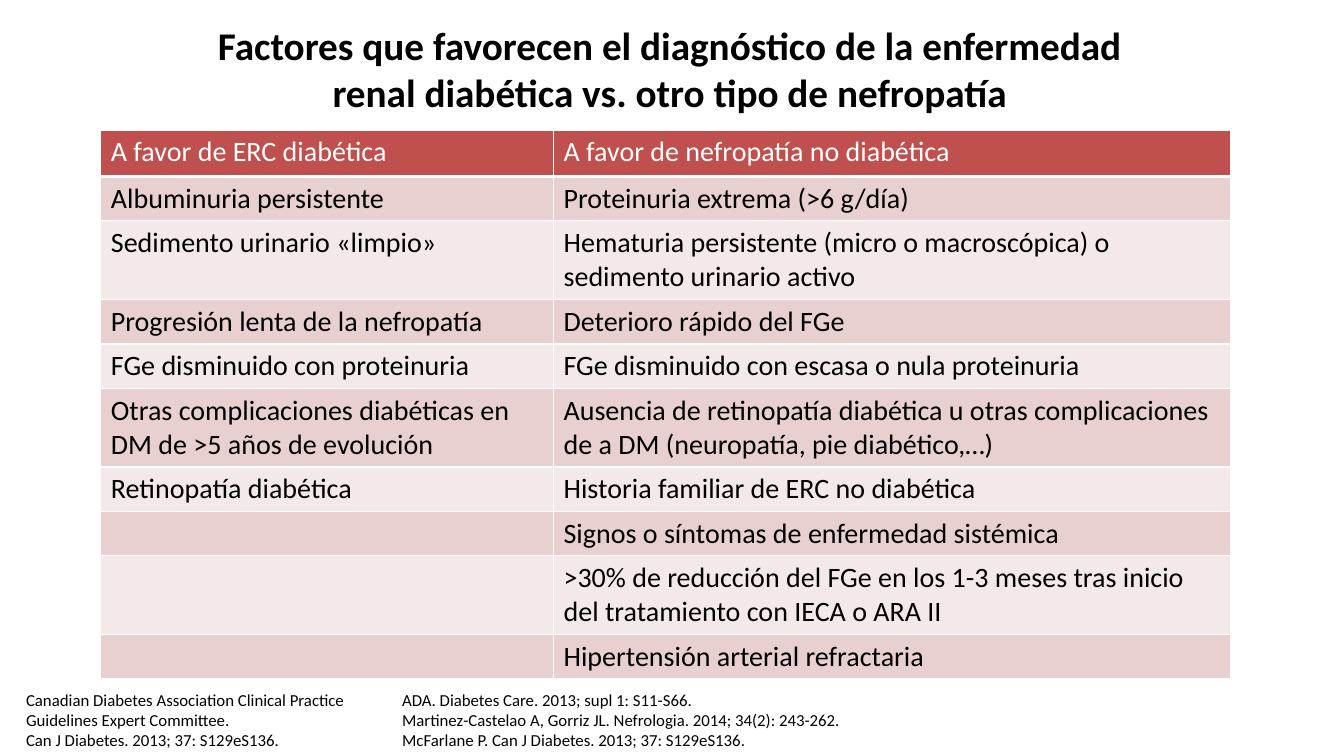
import pptx
import pptx.dml.color
import pptx.enum.text
import pptx.oxml
import pptx.oxml.ns
import pptx.util

Inches = pptx.util.Inches
Pt = pptx.util.Pt

HEADER_FILL = "C0504D"
BAND_FILLS = ("E8D0D0", "F4E9E9")
COLUMN_SHARES = (4.49, 6.72)
HEADER_HEIGHT, SINGLE_HEIGHT, DOUBLE_HEIGHT = 0.46, 0.43, 0.75
DOUBLE_ROWS = (2, 5, 8)

HEADING = ("Factores que favorecen el diagnóstico de la enfermedad "
           "renal diabética vs. otro tipo de nefropatía")
FACTORS = [
    ("A favor de ERC diabética", "A favor de nefropatía no diabética"),
    ("Albuminuria persistente", "Proteinuria extrema (>6 g/día)"),
    ("Sedimento urinario «limpio»",
     "Hematuria persistente (micro o macroscópica) o sedimento urinario activo"),
    ("Progresión lenta de la nefropatía", "Deterioro rápido del FGe"),
    ("FGe disminuido con proteinuria", "FGe disminuido con escasa o nula proteinuria"),
    ("Otras complicaciones diabéticas en DM de >5 años de evolución",
     "Ausencia de retinopatía diabética u otras complicaciones de a DM "
     "(neuropatía, pie diabético,…)"),
    ("Retinopatía diabética", "Historia familiar de ERC no diabética"),
    ("", "Signos o síntomas de enfermedad sistémica"),
    ("", ">30% de reducción del FGe en los 1-3 meses tras inicio del "
         "tratamiento con IECA o ARA II"),
    ("", "Hipertensión arterial refractaria"),
]
GUIDELINE_REFERENCES = [
    "Canadian Diabetes Association Clinical Practice Guidelines Expert Committee.",
    "Can J Diabetes. 2013; 37: S129eS136.",
]
ARTICLE_REFERENCES = [
    "ADA. Diabetes Care. 2013; supl 1: S11-S66.",
    "Martinez-Castelao A, Gorriz JL. Nefrologia. 2014; 34(2): 243-262.",
    "McFarlane P. Can J Diabetes. 2013; 37: S129eS136.",
]


def rgb(hex_code):
    return pptx.dml.color.RGBColor.from_string(hex_code)


def style_text(frame, size, hex_code="000000", bold=False):
    for paragraph in frame.paragraphs:
        for font in [paragraph.font] + [run.font for run in paragraph.runs]:
            font.name = "Calibri"
            font.size = Pt(size)
            font.bold = bold
            font.color.rgb = rgb(hex_code)


def set_borders(cell, bottom_width):
    properties = cell._tc.get_or_add_tcPr()
    widths = {"lnL": 1, "lnR": 1, "lnT": 1, "lnB": bottom_width}
    for position, (side, width) in enumerate(widths.items()):
        border = pptx.oxml.parse_xml(
            f'<a:{side} {pptx.oxml.ns.nsdecls("a")} w="{Pt(width)}">'
            '<a:solidFill><a:srgbClr val="FFFFFF"/></a:solidFill>'
            f'</a:{side}>')
        properties.insert(position, border)


def place_heading(slide, left, top, width, height):
    heading = slide.shapes.title
    heading.left, heading.top = Inches(left), Inches(top)
    heading.width, heading.height = Inches(width), Inches(height)
    frame = heading.text_frame
    frame.text = HEADING
    frame.word_wrap = True
    frame.auto_size = pptx.enum.text.MSO_AUTO_SIZE.NONE
    frame.vertical_anchor = pptx.enum.text.MSO_ANCHOR.MIDDLE
    frame.paragraphs[0].alignment = pptx.enum.text.PP_ALIGN.CENTER
    style_text(frame, 28, bold=True)


def place_factors(slide, left, top, width, height):
    factors = slide.shapes.add_table(
        len(FACTORS), len(COLUMN_SHARES),
        Inches(left), Inches(top), Inches(width), Inches(height)).table
    for column, share in zip(factors.columns, COLUMN_SHARES):
        column.width = Inches(width * share / sum(COLUMN_SHARES))
    for index, pair in enumerate(FACTORS):
        is_header = index == 0
        row_height = DOUBLE_HEIGHT if index in DOUBLE_ROWS else SINGLE_HEIGHT
        factors.rows[index].height = Inches(HEADER_HEIGHT if is_header else row_height)
        for cell, factor in zip(factors.rows[index].cells, pair):
            cell.text_frame.text = factor
            style_text(cell.text_frame, 20, "FFFFFF" if is_header else "000000")
            cell.fill.solid()
            cell.fill.fore_color.rgb = rgb(
                HEADER_FILL if is_header else BAND_FILLS[(index - 1) % 2])
            set_borders(cell, 3 if is_header else 1)


def place_references(slide, references, left, top, width, height):
    frame = slide.shapes.add_textbox(
        Inches(left), Inches(top), Inches(width), Inches(height)).text_frame
    frame.word_wrap = True
    frame.text = "\n".join(references)
    style_text(frame, 12)


def main():
    presentation = pptx.Presentation()
    presentation.slide_width = Inches(13.33)
    presentation.slide_height = Inches(7.5)
    slide = presentation.slides.add_slide(presentation.slide_layouts[5])
    place_heading(slide, 1.89, 0.14, 9.5, 1.07)
    place_factors(slide, 1, 1.29, 11.21, 5.37)
    place_references(slide, GUIDELINE_REFERENCES, 0.16, 6.79, 3.78, 0.71)
    place_references(slide, ARTICLE_REFERENCES, 3.89, 6.79, 5.56, 0.71)
    presentation.save("out.pptx")


if __name__ == "__main__":
    main()
